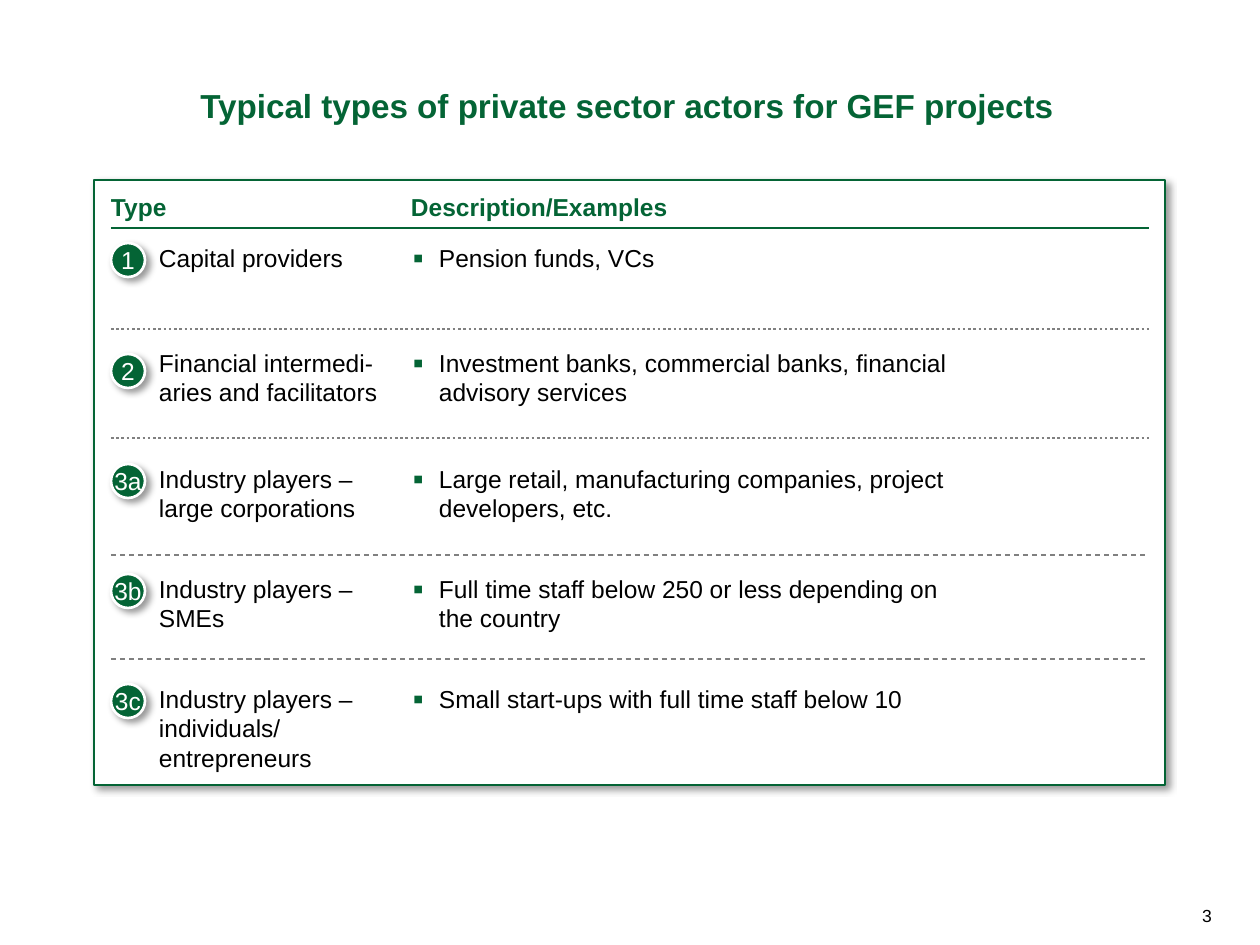
from lxml import etree
from pptx import Presentation
from pptx.dml.color import RGBColor
from pptx.enum.dml import MSO_LINE_DASH_STYLE as DASH
from pptx.enum.shapes import MSO_CONNECTOR, MSO_SHAPE
from pptx.enum.text import MSO_ANCHOR, PP_ALIGN
from pptx.oxml.ns import qn
from pptx.util import Emu, Inches, Pt

EMU_PER_PX = 914400 / 126
COLORS = {"green": "046435", "gray": "808080", "white": "FFFFFF", "black": "000000"}

LEFT, RIGHT = 111, 1149
LABEL_LEFT, LABEL_WIDTH = 159, 229
DESCRIPTION_LEFT = 411
LINE_HEIGHT = 30
BADGE_SIZE = 34

# badge, badge top, text top, type, label lines, description, description lines and width
ACTORS = [
    ("1", 243, 243, "Capital providers", 1, "Pension funds, VCs", 1, 339),
    ("2", 354, 348, "Financial intermedi-aries and facilitators", 2,
     "Investment banks, commercial banks, financial advisory services", 2, 551),
    ("3a", 464, 464, "Industry players – large corporations", 2,
     "Large retail, manufacturing companies, project developers, etc.", 2, 536),
    ("3b", 574, 574, "Industry players – SMEs", 2,
     "Full time staff below 250 or less depending on the country", 2, 536),
    ("3c", 684, 684, "Industry players – individuals/ entrepreneurs", 3,
     "Small start-ups with full time staff below 10", 1, 536),
]
# top, width in points, dash
SEPARATORS = [
    (329, 1.5, DASH.ROUND_DOT),
    (438, 1.5, DASH.ROUND_DOT),
    (555, 0.75, DASH.DASH),
    (659, 0.75, DASH.DASH),
]


def px(value):
    return Emu(round(value * EMU_PER_PX))


def rgb(name):
    return RGBColor.from_string(COLORS[name])


class SlideBuilder:
    font_name = "Arial"

    def __init__(self, slide):
        self.slide = slide

    def set_text(self, shape, text, size=14, color="black", bold=False,
                 align=PP_ALIGN.LEFT, anchor=MSO_ANCHOR.TOP, wrap=True, bullet=False):
        frame = shape.text_frame
        settings = {"margin_left": 0, "margin_top": 0, "margin_right": 0,
                    "margin_bottom": 0, "word_wrap": wrap, "vertical_anchor": anchor}
        for name, value in settings.items():
            setattr(frame, name, value)
        paragraph = frame.paragraphs[0]
        paragraph.text = text
        paragraph.alignment = align
        if bullet:
            self.add_bullet(paragraph)
        font = paragraph.runs[0].font
        for name, value in {"name": self.font_name, "size": Pt(size), "bold": bold}.items():
            setattr(font, name, value)
        font.color.rgb = rgb(color)

    def add_bullet(self, paragraph):
        paragraph.level = 1
        properties = paragraph._p.get_or_add_pPr()
        properties.set("marL", str(px(28)))
        properties.set("indent", str(px(-26)))
        color = etree.SubElement(properties, qn("a:buClr"))
        etree.SubElement(color, qn("a:srgbClr"), val=COLORS["green"])
        etree.SubElement(properties, qn("a:buSzPct"), val="125000")
        etree.SubElement(properties, qn("a:buFont"), typeface=self.font_name)
        etree.SubElement(properties, qn("a:buChar"), char="▪")

    def title(self, text, left, top, width, height):
        shape = self.slide.shapes.title
        box = {"left": left, "top": top, "width": width, "height": height}
        for name, value in box.items():
            setattr(shape, name, px(value))
        self.set_text(shape, text, size=19, color="green", bold=True, align=PP_ALIGN.CENTER)

    def text(self, text, left, top, width, height, **style):
        shape = self.slide.shapes.add_textbox(px(left), px(top), px(width), px(height))
        self.set_text(shape, text, **style)

    def shape(self, kind, left, top, width, height, fill, line):
        """Add a filled preset shape with an outline and a soft drop shadow."""
        shape = self.slide.shapes.add_shape(kind, px(left), px(top), px(width), px(height))
        shape.fill.solid()
        shape.fill.fore_color.rgb = rgb(fill)
        shape.line.color.rgb = rgb(line)
        shape.line.width = Pt(1.5)
        shape.shadow.inherit = False
        effects = shape._element.spPr.find(qn("a:effectLst"))
        shadow = etree.SubElement(effects, qn("a:outerShdw"), blurRad=str(Pt(4)),
                                  dist=str(Pt(3)), dir="2700000", algn="tl", rotWithShape="0")
        color = etree.SubElement(shadow, qn("a:srgbClr"), val=COLORS["black"])
        etree.SubElement(color, qn("a:alpha"), val="40000")
        return shape

    def badge(self, text, left, top):
        shape = self.shape(MSO_SHAPE.OVAL, left, top, BADGE_SIZE, BADGE_SIZE, "green", "white")
        self.set_text(shape, text, color="white", align=PP_ALIGN.CENTER,
                      anchor=MSO_ANCHOR.MIDDLE, wrap=False)

    def rule(self, top, color, width, dash=None):
        """Draw a horizontal line across the panel."""
        line = self.slide.shapes.add_connector(
            MSO_CONNECTOR.STRAIGHT, px(LEFT), px(top), px(RIGHT), px(top))
        line.line.color.rgb = rgb(color)
        line.line.width = Pt(width)
        if dash:
            line.line.dash_style = dash
        etree.SubElement(line._element.spPr, qn("a:effectLst"))


def main():
    presentation = Presentation()
    presentation.slide_width, presentation.slide_height = Inches(10), Inches(7.5)
    builder = SlideBuilder(presentation.slides.add_slide(presentation.slide_layouts[5]))

    builder.title("Typical types of private sector actors for GEF projects", 21, 85, 1212, 40)
    builder.text("3", 1202, 905, 29, 21, size=10, wrap=False)
    builder.shape(MSO_SHAPE.RECTANGLE, 94, 180, 1071, 605, "white", "green")

    for badge, badge_top, top, label, label_lines, description, lines, width in ACTORS:
        builder.text(label, LABEL_LEFT, top, LABEL_WIDTH, label_lines * LINE_HEIGHT)
        builder.badge(badge, LEFT, badge_top)
        builder.text(description, DESCRIPTION_LEFT, top, width, lines * LINE_HEIGHT, bullet=True)

    for top, width, dash in SEPARATORS:
        builder.rule(top, "gray", width, dash)

    for heading, left, width in [("Type", LEFT, 277),
                                 ("Description/Examples", DESCRIPTION_LEFT, 339)]:
        builder.text(heading, left, 192, width, LINE_HEIGHT, color="green", bold=True)
    builder.rule(228, "green", 0.75)

    presentation.save("out.pptx")


if __name__ == "__main__":
    main()
